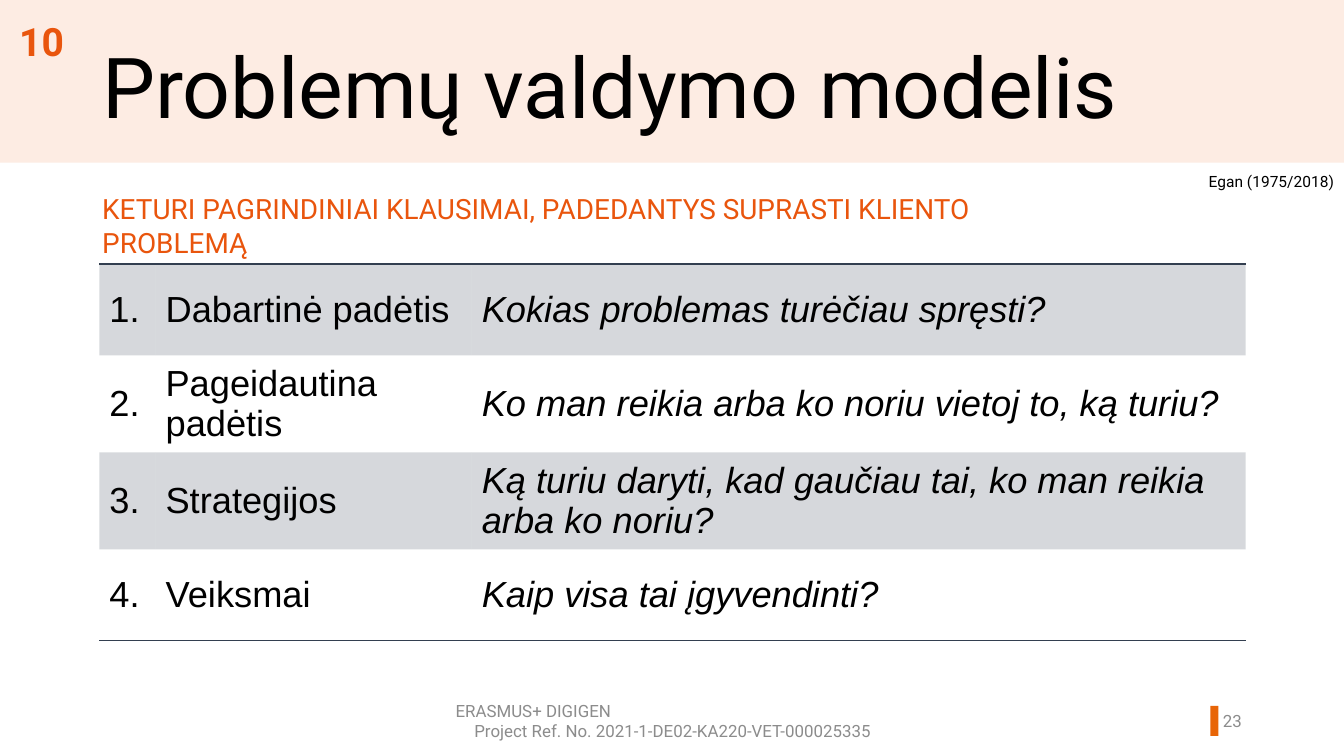
from lxml.etree import SubElement
from pptx import Presentation
from pptx.dml.color import RGBColor
from pptx.enum.shapes import MSO_SHAPE
from pptx.enum.text import MSO_ANCHOR, PP_ALIGN
from pptx.oxml.ns import qn
from pptx.util import Emu, Pt

PX = 9144
COLORS = {"band": "FDECE3", "accent": "E86507", "orange": "E9550D",
          "grey": "8C8C8C", "navy": "333F50", "black": "000000"}
NO_STYLE = "{2D5ABB26-0587-4C30-8999-92F81FD0307C}"
QUESTIONS = [
    ("Dabartinė padėtis", "Kokias problemas turėčiau spręsti?"),
    ("Pageidautina padėtis", "Ko man reikia arba ko noriu vietoj to, ką turiu?"),
    ("Strategijos", "Ką turiu daryti, kad gaučiau tai, ko man reikia arba ko noriu?"),
    ("Veiksmai", "Kaip visa tai įgyvendinti?"),
]


def px(*lengths):
    """Turn px lengths into EMU."""
    return [Emu(n * PX) for n in lengths]


def color(name):
    """Look up a colour by name."""
    return RGBColor.from_string(COLORS[name])


def write(p, text, size=20, font="Roboto", fill="black", bold=False,
          italic=False, align=PP_ALIGN.LEFT):
    """Write one formatted run into a paragraph."""
    p.alignment = align
    r = p.add_run()
    r.text = text
    r.font.size = Pt(size)
    r.font.name = font
    r.font.bold = bold
    r.font.italic = italic
    r.font.color.rgb = color(fill)


def add_text(s, box, text, anchor=MSO_ANCHOR.TOP, **fmt):
    """Add a wrapping text box and return its frame."""
    tf = s.shapes.add_textbox(*px(*box)).text_frame
    tf.word_wrap = True
    tf.vertical_anchor = anchor
    write(tf.paragraphs[0], text, **fmt)
    return tf


def add_bar(s, box, fill):
    """Add a plain filled rectangle behind later parts."""
    sp = s.shapes.add_shape(MSO_SHAPE.RECTANGLE, *px(*box))
    sp.shadow.inherit = False
    sp.fill.solid()
    sp.fill.fore_color.rgb = color(fill)
    sp.line.fill.background()


def add_header(s, x, y, w, h):
    """Place the band, the chapter number and the title."""
    add_bar(s, (x, y, w, h), "band")
    add_text(s, (x, y + 12, 83, 57), "10", size=28, fill="orange", bold=True,
             align=PP_ALIGN.CENTER)
    title = s.shapes.title
    title.left, title.top, title.width, title.height = px(x + 92, y + 41, 1055, 86)
    s.shapes._spTree.append(title._element)
    tf = title.text_frame
    tf.word_wrap = True
    tf.vertical_anchor = MSO_ANCHOR.TOP
    p = tf.paragraphs[0]
    p.line_spacing = 0.9
    write(p, "Problemų valdymo modelis", size=60.3)


def add_border(cell, side):
    """Draw a 1 pt border on one side of a cell."""
    ln = SubElement(cell._tc.get_or_add_tcPr(), qn(f"a:{side}"), w=str(Pt(1)))
    SubElement(SubElement(ln, qn("a:solidFill")), qn("a:srgbClr"), val=COLORS["navy"])


def shade(cell):
    """Fill a cell with a transparent tint."""
    cell.fill.solid()
    cell.fill.fore_color.rgb = color("navy")
    tint = cell._tc.tcPr.find(f"{qn('a:solidFill')}/{qn('a:srgbClr')}")
    SubElement(tint, qn("a:alpha"), val="20000")


def add_questions(s, x, y, w, h):
    """Place the table of four questions."""
    last = len(QUESTIONS) - 1
    table = s.shapes.add_table(last + 1, 3, *px(x, y, w, h)).table
    table.first_row = table.horz_banding = False
    table._tbl.tblPr.find(qn("a:tableStyleId")).text = NO_STYLE
    for col, width in zip(table.columns, px(56, 315, w - 371)):
        col.width = width
    for i, question in enumerate(QUESTIONS):
        for j, text in enumerate((f"{i + 1}.", *question)):
            cell = table.cell(i, j)
            cell.vertical_anchor = MSO_ANCHOR.MIDDLE
            write(cell.text_frame.paragraphs[0], text, size=26, font="Arial",
                  italic=j == 2)
            if i == 0:
                add_border(cell, "lnT")
            if i == last:
                add_border(cell, "lnB")
            if i % 2:
                cell.fill.background()
            else:
                shade(cell)


def add_body(s, x, y, w, h):
    """Place the citation, the subheading and the table."""
    add_text(s, (x + w - 312, y, 312, 29), "Egan (1975/2018)", size=11.1,
             align=PP_ALIGN.RIGHT)
    add_text(s, (x + 92, y + 20, 1015, 44),
             "KETURI PAGRINDINIAI KLAUSIMAI, PADEDANTYS SUPRASTI KLIENTO PROBLEMĄ",
             fill="orange")
    add_questions(s, x + 99, y + 97, 1142, h - 97)


def add_footer(s, x, y, w, h):
    """Place the project reference and the page number."""
    fmt = {"size": 12.1, "fill": "grey"}
    add_bar(s, (x + w - 133, y + 5, 8, 30), "accent")
    tf = add_text(s, (x + 444, y, 452, h), "ERASMUS+ DIGIGEN",
                  anchor=MSO_ANCHOR.MIDDLE, **fmt)
    write(tf.add_paragraph(), "Project Ref. No. 2021-1-DE02-KA220-VET-000025335",
          align=PP_ALIGN.CENTER, **fmt)
    add_text(s, (x + w - 157, y, 65, h), "23", anchor=MSO_ANCHOR.MIDDLE,
             align=PP_ALIGN.RIGHT, **fmt)


def main():
    """Build the slide and save it."""
    prs = Presentation()
    prs.slide_width, prs.slide_height = px(1339, 753)
    s = prs.slides.add_slide(prs.slide_layouts[5])
    add_header(s, 0, 0, 1339, 162)
    add_body(s, 0, 166, 1339, 461)
    add_footer(s, 0, 698, 1339, 40)
    prs.save("out.pptx")


if __name__ == "__main__":
    main()
